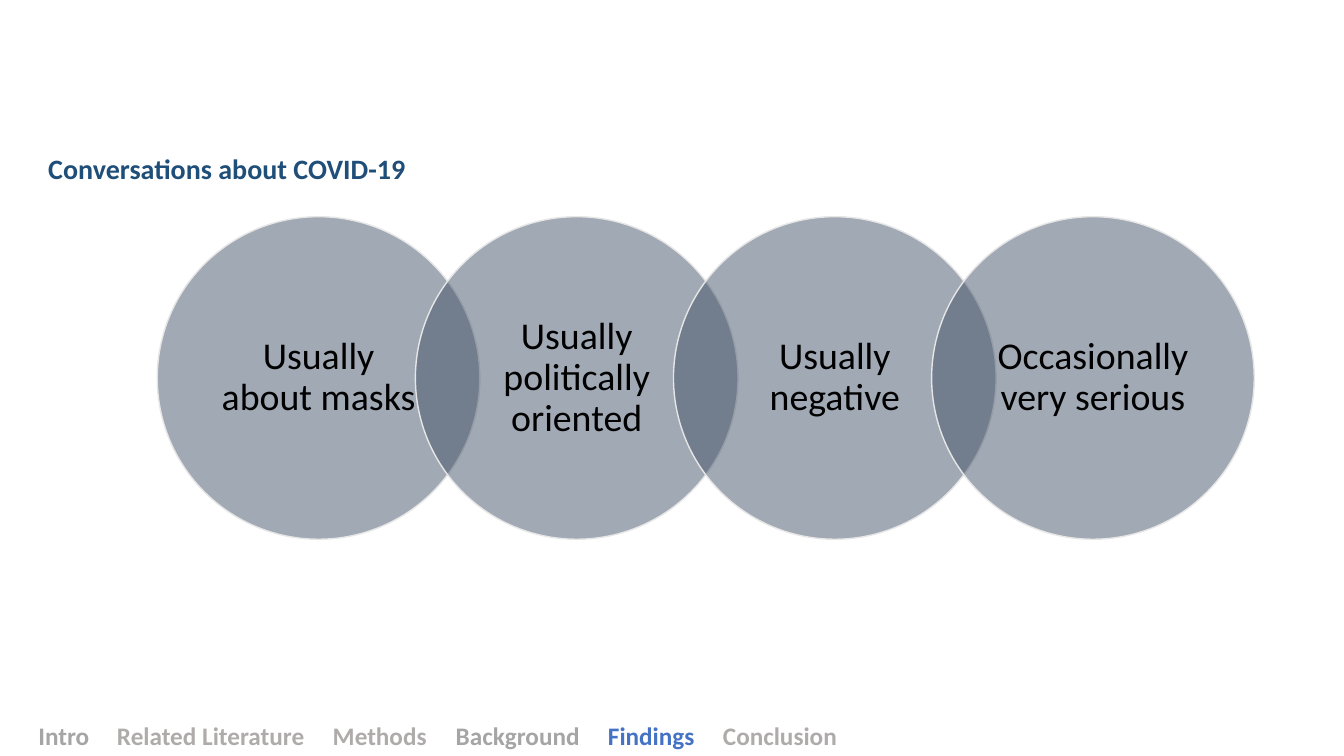
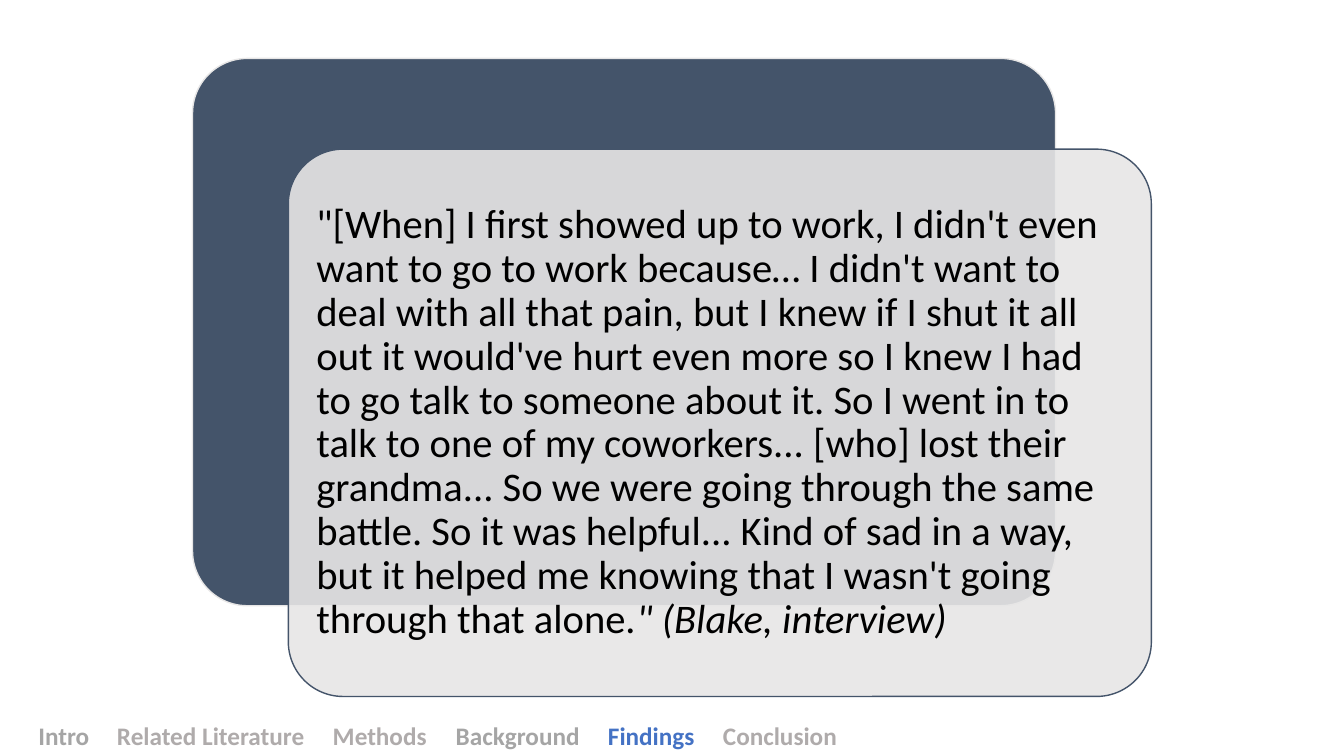
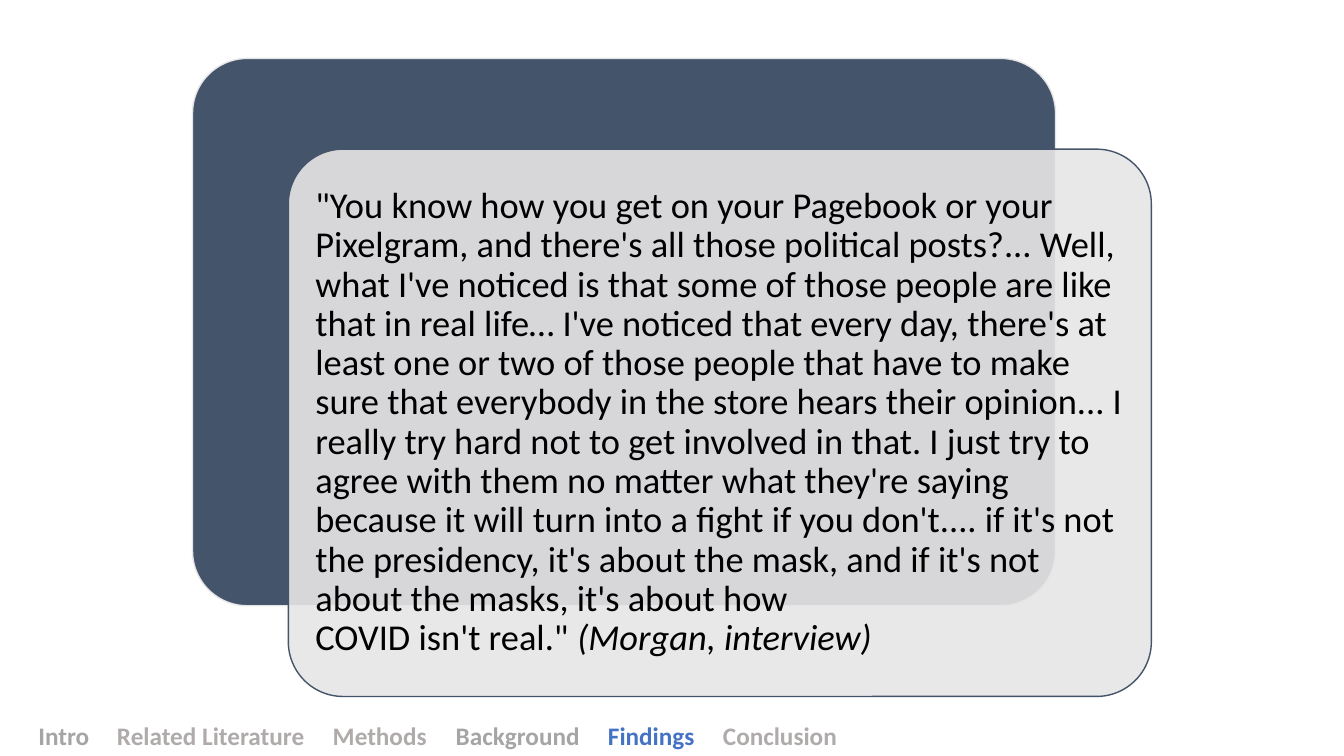
from dataclasses import dataclass

from lxml import etree
from pptx import Presentation
from pptx.dml.color import RGBColor
from pptx.enum.shapes import MSO_SHAPE
from pptx.enum.text import MSO_ANCHOR, PP_ALIGN
from pptx.oxml.ns import qn
from pptx.util import Inches, Pt

ELLIPSE, ROUNDED = MSO_SHAPE.OVAL, MSO_SHAPE.ROUNDED_RECTANGLE
MIDDLE = MSO_ANCHOR.MIDDLE
LEFT, CENTER = PP_ALIGN.LEFT, PP_ALIGN.CENTER
NBSP = chr(160)


@dataclass(frozen=True)
class Theme:
    font: str = "Calibri"
    title: str = "1F4E79"
    slate: str = "44546A"
    pale: str = "E7E6E6"
    ink: str = "000000"
    active: str = "4472C4"
    grey: str = "A5A5A5"
    light_grey: str = "AFABAB"
    title_size: int = 20
    footer_size: int = 18
    circle_size: int = 27


THEME = Theme()

# Section name, colour, left edge in inches
SECTIONS = [
    ("Intro", THEME.grey, 0.38),
    ("Related Literature", THEME.light_grey, 1.16),
    ("Methods", THEME.light_grey, 3.3),
    ("Background", THEME.grey, 4.52),
    ("Findings", THEME.active, 6.03),
    ("Conclusion", THEME.light_grey, 7.17),
]

TITLE = "Conversations about COVID-19"
TOPICS = [
    "Usually about masks",
    "Usually politically oriented",
    "Usually negative",
    "Occasionally very serious",
]

# A tilde marks a space where the line must not break
QUOTES = [
    {
        "words": "\"[When] I first showed up to work, I didn't even want to go to work "
                 "because… I didn't want to deal with all that pain, but I knew if I shut "
                 "it all out it would've hurt even more so I knew I had to~go talk to "
                 "someone about it. So I went in to talk to one of my coworkers... [who] "
                 "lost their grandma... So we were going through the same battle. So it "
                 "was helpful... Kind of sad in a way, but it helped me knowing that I "
                 "wasn't going through that alone",
        "speaker": ".\" (Blake, interview)",
        "size": 29,
        "inset": 0.12,
    },
    {
        "words": "\"You know how you get on your Pagebook or your Pixelgram, and there's "
                 "all those political posts?... Well, what I've noticed is that some of "
                 "those people are like that in real life… I've noticed that every day, "
                 "there's at least one or two of those people that have to make sure that "
                 "everybody in the store hears their opinion... I really try hard not to "
                 "get involved in that. I just try to agree with them no matter what "
                 "they're saying because it will turn into a fight if you don't.... if "
                 "it's not the presidency, it's about the mask, and if it's not about the "
                 "masks, it's about how COVID~isn't~real.\"~",
        "speaker": "(Morgan, interview)",
        "size": 26,
        "inset": 0.11,
    },
]


def add_span(para, text, size, color, bold=False, italic=False):
    span = para.add_run()
    span.text = text.replace("~", NBSP)
    font = span.font
    font.name, font.size = THEME.font, Pt(size)
    font.bold, font.italic = bold, italic
    font.color.rgb = RGBColor.from_string(color)


def add_panel(page, kind, left, top, width, height, fill, line, opacity=100):
    panel = page.shapes.add_shape(
        kind, Inches(left), Inches(top), Inches(width), Inches(height))
    panel.shadow.inherit = False
    panel.fill.solid()
    panel.fill.fore_color.rgb = RGBColor.from_string(fill)
    if opacity < 100:
        color = panel.fill._xPr.find(qn("a:solidFill"))[0]
        etree.SubElement(color, qn("a:alpha")).set("val", str(opacity * 1000))
    panel.line.color.rgb = RGBColor.from_string(line)
    panel.line.width = Pt(1)
    return panel


def panel_paragraph(panel, align, inset_x, inset_y):
    """Set up the panel's text area and return its paragraph."""
    frame = panel.text_frame
    frame.word_wrap = True
    frame.vertical_anchor = MIDDLE
    frame.margin_left = frame.margin_right = Inches(inset_x)
    frame.margin_top = frame.margin_bottom = Inches(inset_y)
    para = frame.paragraphs[0]
    para.alignment = align
    para.line_spacing = 0.9
    return para


def add_text_box(page, left, top, width, height):
    box = page.shapes.add_textbox(
        Inches(left), Inches(top), Inches(width), Inches(height))
    box.text_frame.word_wrap = True
    return box


def add_footer(page):
    """Section names on one line, each at its own tab stop."""
    box = add_text_box(page, 0, 7.1, 9.05, 0.4)
    start = SECTIONS[0][2]
    box.text_frame.margin_left = Inches(start)
    para = box.text_frame.paragraphs[0]
    stops = etree.SubElement(para._p.get_or_add_pPr(), qn("a:tabLst"))
    for index, (name, color, left) in enumerate(SECTIONS):
        if index:
            stop = etree.SubElement(stops, qn("a:tab"))
            stop.set("pos", str(Inches(left - start)))
            stop.set("algn", "l")
        add_span(para, "\t" + name if index else name,
                 THEME.footer_size, color, bold=True)


def add_page(deck):
    page = deck.slides.add_slide(deck.slide_layouts[6])
    add_footer(page)
    return page


def build_topics(deck):
    page = add_page(deck)
    heading = add_text_box(page, 0.38, 1.45, 4.2, 0.44)
    add_span(heading.text_frame.paragraphs[0], TITLE,
             THEME.title_size, THEME.title, bold=True)
    diameter = 3.2
    pitch = diameter * 0.8
    for index, topic in enumerate(TOPICS):
        circle = add_panel(page, ELLIPSE, 1.56 + index * pitch, 2.15,
                           diameter, diameter, THEME.slate, THEME.pale, opacity=50)
        para = panel_paragraph(circle, CENTER, 0.16, 0.04)
        add_span(para, topic, THEME.circle_size, THEME.ink)


def build_quote(deck, quote):
    page = add_page(deck)
    width, height = 8.56, 5.43
    back = add_panel(page, ROUNDED, 1.91, 0.58, width, height,
                     THEME.slate, THEME.pale)
    front = add_panel(page, ROUNDED, 2.86, 1.48, width, height,
                      THEME.pale, THEME.slate, opacity=90)
    for panel in (back, front):
        panel.adjustments[0] = 0.1
    para = panel_paragraph(front, LEFT, quote["inset"], quote["inset"])
    add_span(para, quote["words"], quote["size"], THEME.ink)
    add_span(para, quote["speaker"], quote["size"], THEME.ink, italic=True)


def main():
    deck = Presentation()
    deck.slide_width, deck.slide_height = Inches(13.33), Inches(7.5)
    build_topics(deck)
    for quote in QUOTES:
        build_quote(deck, quote)
    deck.save("out.pptx")


if __name__ == "__main__":
    main()
